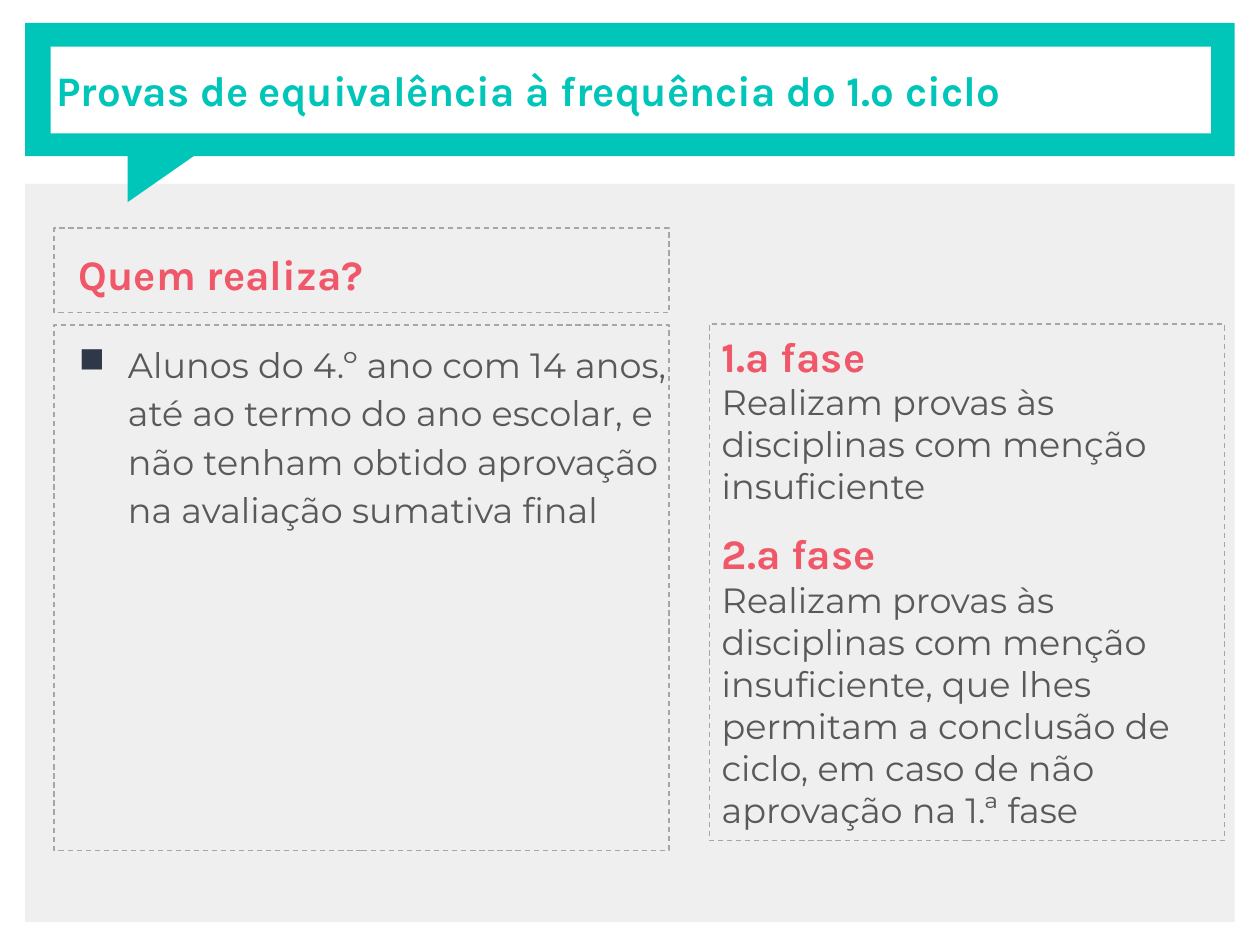
from lxml import etree
from pptx import Presentation
from pptx import util as u
from pptx.dml.color import RGBColor
from pptx.enum import dml, shapes, text
from pptx.oxml.ns import qn

TEAL = RGBColor(0x00, 0xC5, 0xB9)
PINK = RGBColor(0xF0, 0x57, 0x68)
GREY = RGBColor(0x59, 0x59, 0x59)
EDGE = RGBColor(0xA6, 0xA6, 0xA6)
PALE = RGBColor(0xEF, 0xEF, 0xEF)
WHITE = RGBColor(0xFF, 0xFF, 0xFF)
NAVY = RGBColor(0x2F, 0x38, 0x48)

RECT = shapes.MSO_SHAPE.RECTANGLE
WEDGE = shapes.MSO_SHAPE.RIGHT_TRIANGLE


class Deck:
    """Holds the style and the current slide."""

    head = ("Karla", 24, True)
    body = ("Montserrat", 20, False)

    def __init__(self, slide):
        self.slide = slide

    def block(self, kind, box, fill, turn=0):
        """Add a filled shape without an outline."""
        shape = self.slide.shapes.add_shape(kind, *map(u.Cm, box))
        shape.shadow.inherit = False
        shape.fill.solid()
        shape.fill.fore_color.rgb = fill
        shape.line.fill.background()
        shape.rotation = turn

    def frame(self, box, pad=0.25, right=0, dashed=True):
        """Add a text box, dashed if asked, and return its text frame."""
        shape = self.slide.shapes.add_textbox(*map(u.Cm, box))
        if dashed:
            shape.line.color.rgb = EDGE
            shape.line.width = u.Pt(0.75)
            shape.line.dash_style = dml.MSO_LINE.DASH
        area = shape.text_frame
        area.word_wrap = True
        area.margin_left = u.Cm(0.25)
        area.margin_right = u.Cm(right)
        area.margin_top = area.margin_bottom = u.Cm(pad)
        return area

    def para(self, area, words, style, color, lead=None, before=None, after=None):
        """Write a paragraph, using the empty first one if it is free."""
        para = area.paragraphs[0] if not area.text else area.add_paragraph()
        para.text = words
        para.font.name, size, para.font.bold = style
        para.font.size = u.Pt(size)
        para.font.color.rgb = color
        para.line_spacing = lead
        para.space_before = before
        para.space_after = after
        return para

    def indent(self, para, left, first=0, mark=None):
        """Indent a paragraph and give it a bullet if a mark is named."""
        props = para._p.get_or_add_pPr()
        props.set("marL", str(u.Cm(left)))
        props.set("indent", str(u.Cm(first)))
        if mark:
            tint = etree.SubElement(props, qn("a:buClr"))
            etree.SubElement(tint, qn("a:srgbClr"), val=str(NAVY))
            etree.SubElement(props, qn("a:buChar"), char=mark)


def main():
    show = Presentation()
    show.slide_width, show.slide_height = u.Cm(25.4), u.Cm(19.05)
    deck = Deck(show.slides.add_slide(show.slide_layouts[6]))

    # Backdrop and title bubble
    deck.block(RECT, (0.51, 3.71, 24.38, 14.88), PALE)
    deck.block(RECT, (0.51, 0.46, 24.38, 2.69), TEAL)
    deck.block(WEDGE, (2.84, 2.59, 1.22, 1.75), TEAL, turn=90)
    deck.block(RECT, (1.02, 0.94, 23.39, 1.75), WHITE)
    title = deck.frame((0.89, 0.46, 23.5, 2.69), right=0.25, dashed=False)
    title.vertical_anchor = text.MSO_ANCHOR.MIDDLE
    deck.para(title, "Provas de equivalência à frequência do 1.º ciclo",
              deck.head, TEAL)

    # Left column: who takes the exams
    who = deck.frame((1.09, 4.6, 12.4, 1.7))
    para = deck.para(who, "Quem realiza?", deck.head, PINK, lead=1.15)
    deck.indent(para, 0.25)

    pupils = deck.frame((1.09, 6.55, 12.4, 10.59))
    para = deck.para(
        pupils,
        "Alunos do 4.º ano com 14 anos, até ao termo do ano escolar, e não "
        "tenham obtido aprovação na avaliação sumativa final",
        deck.body, GREY, lead=1.15, before=u.Pt(6))
    deck.indent(para, 1.24, -0.99, "■")

    # Right column: the two phases
    phases = (
        ("1.ª fase",
         "Realizam provas às disciplinas com menção insuficiente", u.Pt(12)),
        ("2.ª fase",
         "Realizam provas às disciplinas com menção insuficiente, que lhes "
         "permitam a conclusão de ciclo, em caso de não aprovação na 1.ª fase",
         None),
    )
    area = deck.frame((14.3, 6.53, 10.39, 10.41), pad=0.13)
    for name, rule, gap in phases:
        deck.para(area, name, deck.head, PINK)
        deck.para(area, rule, deck.body, GREY, after=gap)

    show.save("out.pptx")


if __name__ == "__main__":
    main()
